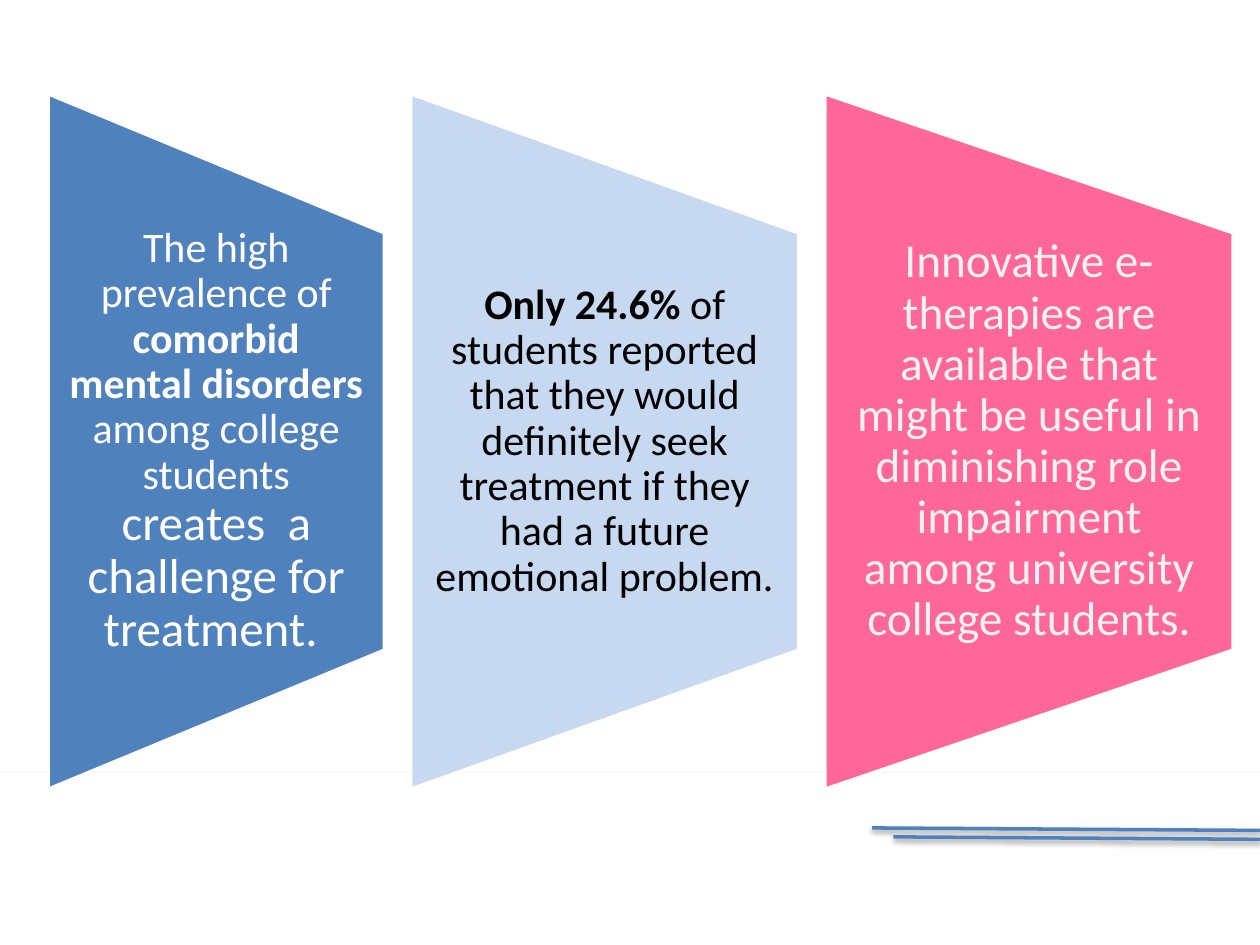
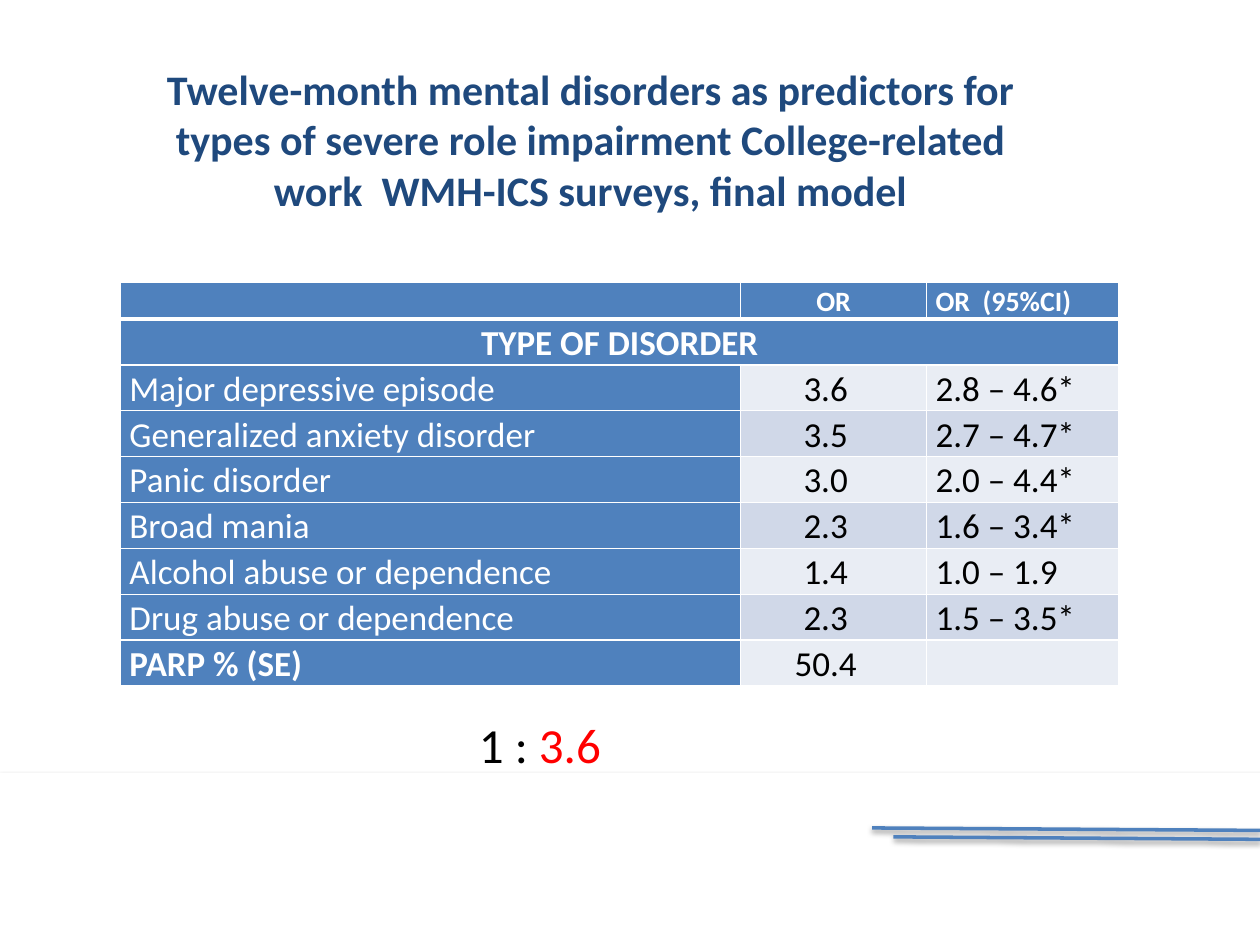
from lxml import etree
from pptx import Presentation
from pptx.dml.color import RGBColor
from pptx.enum import shapes, text
from pptx.oxml import ns
from pptx.util import Cm, Pt

WHITE = RGBColor(0xFF, 0xFF, 0xFF)
BLACK = RGBColor(0, 0, 0)
BLUE = RGBColor(0x4F, 0x81, 0xBD)
NAVY = RGBColor(0x1F, 0x49, 0x7D)
SKY = RGBColor(0xC6, 0xD9, 0xF1)
PINK = RGBColor(0xFF, 0x66, 0x99)
PALE = RGBColor(0xF2, 0xF2, 0xF2)
RED = RGBColor(0xFF, 0, 0)
BANDS = RGBColor(0xE9, 0xED, 0xF4), RGBColor(0xD0, 0xD8, 0xE8)
FONT = "Calibri"
WIDE, HIGH = 25.4, 19.05
MID, LEFT = text.PP_ALIGN.CENTER, text.PP_ALIGN.LEFT

PANELS = [
    (6.78, BLUE, 0.43, 24, WHITE, [
        ("The high prevalence of ", {}),
        ("comorbid mental disorders ", {"bold": True}),
        ("among college students ", {}),
        ("creates  a challenge for treatment. ", {"size": 28})]),
    (7.82, SKY, 0.43, 24, BLACK, [
        ("Only 24.6% ", {"bold": True}),
        ("of students reported that they would definitely seek treatment "
         "if they had a future emotional problem.", {})]),
    (8.23, PINK, 0.48, 27, PALE, [
        ("Innovative e‐therapies are available that might be useful in "
         "diminishing role impairment among university college students.", {})]),
]

TITLE = ("Twelve-month mental disorders as predictors for types of severe role "
         "impairment College-related work  WMH-ICS surveys, final model")
ROWS = [
    ("", "OR", "OR  (95%CI)"),
    ("TYPE OF DISORDER", "", ""),
    ("Major depressive episode", "3.6", "2.8 – 4.6*"),
    ("Generalized anxiety disorder", "3.5", "2.7 – 4.7*"),
    ("Panic disorder", "3.0", "2.0 – 4.4*"),
    ("Broad mania", "2.3", "1.6 – 3.4*"),
    ("Alcohol abuse or dependence", "1.4", "1.0 – 1.9"),
    ("Drug abuse or dependence", "2.3", "1.5 – 3.5*"),
    ("PARP % (SE)", "50.4", ""),
]


def write(frame, runs, size=24, color=BLACK, bold=False, align=MID, space=1.0,
          anchor=text.MSO_ANCHOR.MIDDLE, wrap=True):
    frame.word_wrap = wrap
    frame.vertical_anchor = anchor
    para = frame.paragraphs[0]
    para.alignment, para.line_spacing = align, space
    for words, extra in runs:
        run = para.add_run()
        run.text = words
        font = run.font
        font.name = FONT
        font.size = Pt(extra.get("size", size))
        font.bold = extra.get("bold", bold)
        font.color.rgb = extra.get("color", color)
    if not runs:
        end = etree.SubElement(para._p, ns.qn("a:endParaRPr"))
        end.set("sz", str(size * 100))


def inset(frame, side):
    frame.margin_left = frame.margin_right = Cm(side)
    frame.margin_top = frame.margin_bottom = 0


def paint(shape, fill, line, width):
    shape.shadow.inherit = False
    shape.fill.solid()
    shape.fill.fore_color.rgb = fill
    shape.line.color.rgb = line
    shape.line.width = Pt(width)


def shade(shape, alpha, dist):
    props = shape._element.spPr
    for old in props.findall(ns.qn("a:effectLst")):
        props.remove(old)
    effect = etree.SubElement(props, ns.qn("a:effectLst"))
    outer = etree.SubElement(effect, ns.qn("a:outerShdw"), blurRad=str(Pt(3.1)),
                             dist=str(Pt(dist)), dir="5400000", rotWithShape="0")
    tint = etree.SubElement(outer, ns.qn("a:srgbClr"), val=str(BLACK))
    etree.SubElement(tint, ns.qn("a:alpha"), val=str(alpha * 1000))


def footer(slide, top):
    band = slide.shapes.add_shape(shapes.MSO_SHAPE.RECTANGLE, 0, Cm(top),
                                  Cm(WIDE), Cm(HIGH - top))
    paint(band, WHITE, WHITE, 0.75)
    shade(band, 35, 1.8)
    for left, drop in ((17.58, 1.09), (18.01, 1.27)):
        rule = slide.shapes.add_connector(
            shapes.MSO_CONNECTOR.STRAIGHT, Cm(left), Cm(top + drop),
            Cm(WIDE), Cm(top + drop + 0.05))
        rule.line.color.rgb = BLUE
        rule.line.width = Pt(2)
        shade(rule, 38, 1.6)


def panel(slide, left, top, width, height, fill, side, size, color, runs):
    shape = slide.shapes.add_shape(
        shapes.MSO_SHAPE.FLOWCHART_MANUAL_OPERATION,
        Cm(left + (width - height) / 2), Cm(top + (height - width) / 2),
        Cm(height), Cm(width))
    shape.rotation = 270
    paint(shape, fill, WHITE, 2)
    box = slide.shapes.add_textbox(Cm(left), Cm(top + height * 0.2),
                                   Cm(width), Cm(height * 0.6))
    inset(box.text_frame, side)
    write(box.text_frame, runs, size=size, color=color, space=0.9)


def border(cell, top, bottom):
    props = cell._tc.get_or_add_tcPr()
    sides = (("L", 1), ("R", 1), ("T", top), ("B", bottom))
    for spot, (side, width) in enumerate(sides):
        line = etree.Element(ns.qn("a:ln" + side), w=str(Pt(width)))
        fill = etree.SubElement(line, ns.qn("a:solidFill"))
        etree.SubElement(fill, ns.qn("a:srgbClr"), val=str(WHITE))
        props.insert(spot, line)


def grid(slide, left, top, widths, first, rest):
    heights = [first] + [rest] * (len(ROWS) - 1)
    table = slide.shapes.add_table(
        len(ROWS), len(widths), Cm(left), Cm(top),
        Cm(sum(widths)), Cm(sum(heights))).table
    for col, width in zip(table.columns, widths):
        col.width = Cm(width)
    for row, height in zip(table.rows, heights):
        row.height = Cm(height)
    table.cell(1, 0).merge(table.cell(1, 2))
    for r, row in enumerate(ROWS):
        for c, words in enumerate(row):
            cell = table.cell(r, c)
            head = r < 2 or c == 0
            inset(cell, 0.18)
            if c == 1 and r > 1:
                cell.margin_right = Cm(0.5)
            write(cell.text_frame, [(words, {})] if words else [],
                  size=16 if r == 0 else 20, color=WHITE if head else BLACK,
                  bold=r < 2 or (c == 0 and r == len(ROWS) - 1),
                  align=MID if c == 1 or r == 1 else LEFT, space=1.07)
            cell.vertical_anchor = text.MSO_ANCHOR.TOP
            cell.fill.solid()
            cell.fill.fore_color.rgb = BLUE if head else BANDS[r % 2]
            border(cell, 3 if r == 1 else 1, 3 if r == 0 else 1)


def title(slide, left, top, width, height):
    shape = slide.shapes.title
    shape.left, shape.top = Cm(left), Cm(top)
    shape.width, shape.height = Cm(width), Cm(height)
    shape.text_frame.auto_size = text.MSO_AUTO_SIZE.NONE
    write(shape.text_frame, [(TITLE, {})], color=NAVY, bold=True)


def ratio(slide, left, top, width, height):
    box = slide.shapes.add_textbox(Cm(left), Cm(top), Cm(width), Cm(height))
    write(box.text_frame, [("1 : ", {}), ("3.6", {"color": RED})], size=28,
          space=1.07, anchor=text.MSO_ANCHOR.TOP, wrap=False)


def start(deck, layout):
    slide = deck.slides.add_slide(deck.slide_layouts[layout])
    footer(slide, 15.6)
    return slide


def trends(deck):
    slide = start(deck, 6)
    left, gap = 0.97, 0.53
    for width, *look in PANELS:
        panel(slide, left, 1.89, width, 14.02, *look)
        left += width + gap


def odds(deck):
    slide = start(deck, 5)
    title(slide, 2.43, 1.14, 18.95, 3.33)
    grid(slide, 2.43, 5.69, (12.5, 3.75, 3.88), 0.74, 0.92)
    ratio(slide, 9.27, 14.2, 3.23, 1.55)


def main():
    deck = Presentation()
    deck.slide_width, deck.slide_height = Cm(WIDE), Cm(HIGH)
    trends(deck)
    odds(deck)
    deck.save("out.pptx")


if __name__ == "__main__":
    main()
